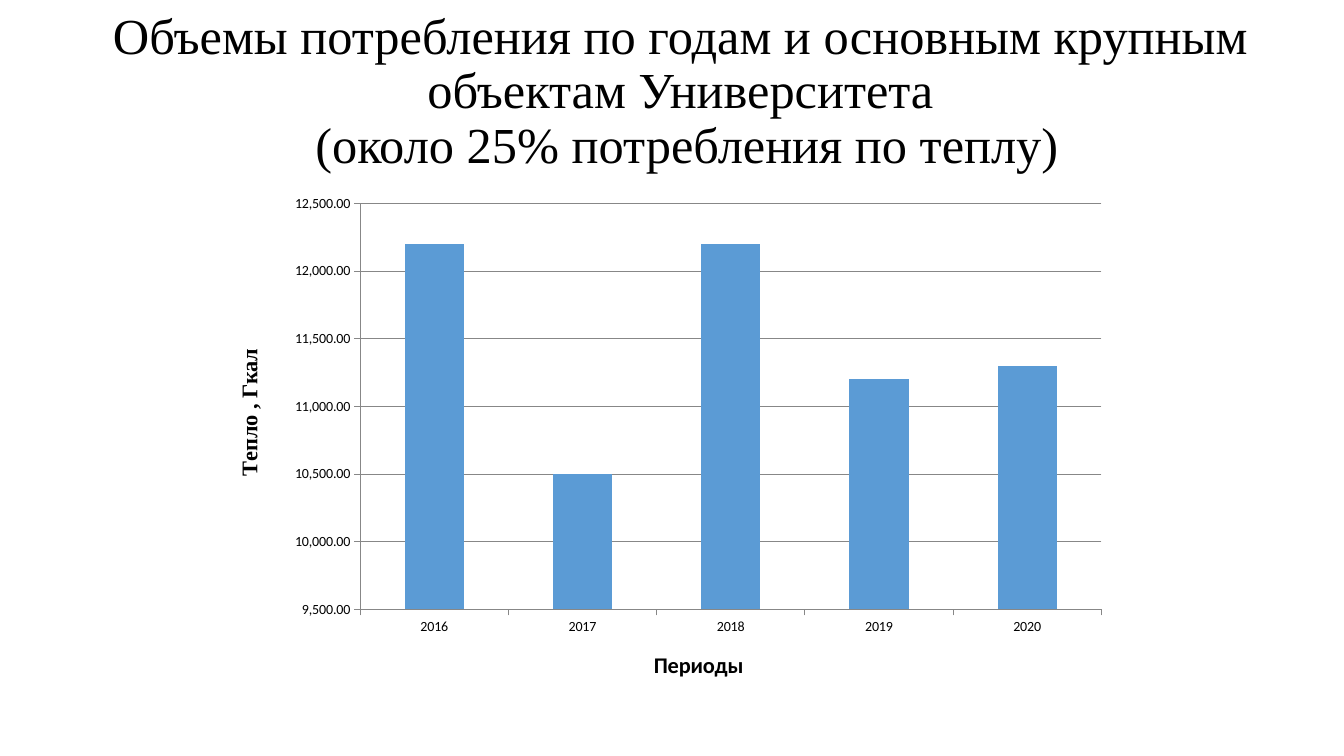
from lxml import etree
from pptx import Presentation
from pptx.chart.data import CategoryChartData
from pptx.dml.color import RGBColor
from pptx.enum.chart import XL_CHART_TYPE as ChartType, XL_TICK_MARK as TickMark
from pptx.enum.text import MSO_ANCHOR as Anchor, PP_ALIGN as Align
from pptx.oxml.ns import qn
from pptx.util import Inches, Pt

COLORS = {"text": "000000", "bar": "5B9BD5", "line": "878787"}
HEADING_FONT = "Times New Roman"
CHART_FONT = "Calibri"
HEADING = ("Объемы потребления по годам и основным крупным объектам Университета"
           "\v (около 25% потребления по теплу)")
HEAT_BY_YEAR = {"2016": 12200, "2017": 10500, "2018": 12200, "2019": 11200, "2020": 11300}


def color(name):
    return RGBColor.from_string(COLORS[name])


def style_font(font, name, size, bold=False):
    font.name = name
    font.size = Pt(size)
    font.bold = bold
    font.color.rgb = color("text")


def set_layout(element, **percents):
    """Place a chart part at percentages of the chart's width and height."""
    for old_layout in element.findall(qn("c:layout")):
        element.remove(old_layout)
    layout = etree.Element(qn("c:layout"))
    manual = etree.SubElement(layout, qn("c:manualLayout"))
    if "w" in percents:
        etree.SubElement(manual, qn("c:layoutTarget"), val="inner")
    for key in ("x", "y"):
        etree.SubElement(manual, qn(f"c:{key}Mode"), val="edge")
    for key, value in percents.items():
        etree.SubElement(manual, qn(f"c:{key}"), val=f"{value / 100:.3f}")
    text = element.find(qn("c:tx"))
    element.insert(0 if text is None else element.index(text) + 1, layout)


def add_heading(slide, left, top, width, height):
    box = slide.shapes.add_textbox(Inches(left), Inches(top), Inches(width), Inches(height))
    frame = box.text_frame
    frame.word_wrap = True
    frame.vertical_anchor = Anchor.MIDDLE
    paragraph = frame.paragraphs[0]
    paragraph.text = HEADING
    paragraph.alignment = Align.CENTER
    paragraph.line_spacing = 0.9
    for run in paragraph.runs:
        style_font(run.font, HEADING_FONT, 36)


def style_axis(axis, title, title_font, x, y):
    axis.major_tick_mark = TickMark.OUTSIDE
    axis.minor_tick_mark = TickMark.NONE
    axis.format.line.color.rgb = color("line")
    axis.format.line.width = Pt(0.75)
    paragraph = axis.axis_title.text_frame.paragraphs[0]
    paragraph.text = title
    style_font(paragraph.runs[0].font, title_font, 16, bold=True)
    set_layout(axis.axis_title._element, x=x, y=y)


def add_heat_chart(slide, left, top, width, height):
    data = CategoryChartData()
    data.categories = list(HEAT_BY_YEAR)
    data.add_series("Тепло", list(HEAT_BY_YEAR.values()))
    chart = slide.shapes.add_chart(ChartType.COLUMN_CLUSTERED, Inches(left), Inches(top),
                                   Inches(width), Inches(height), data).chart
    chart.has_title = False
    chart.has_legend = False
    style_font(chart.font, CHART_FONT, 10)

    # Bars
    plot = chart.plots[0]
    plot.vary_by_categories = False
    plot.gap_width = 150
    fill = plot.series[0].format.fill
    fill.solid()
    fill.fore_color.rgb = color("bar")
    set_layout(chart._chartSpace.chart.plotArea, x=15.5, y=3.5, w=82.4, h=78.5)

    # Axes
    style_axis(chart.category_axis, "Периоды", CHART_FONT, 47.7, 89)
    value_axis = chart.value_axis
    style_axis(value_axis, "Тепло , Гкал", HEADING_FONT, 1.1, 30.8)
    value_axis.minimum_scale = 9500
    value_axis.maximum_scale = 12500
    value_axis.major_unit = 500
    value_axis.tick_labels.number_format = "#,##0.00"
    value_axis.tick_labels.number_format_is_linked = False
    value_axis.has_major_gridlines = True
    grid_line = value_axis.major_gridlines.format.line
    grid_line.color.rgb = color("line")
    grid_line.width = Pt(0.75)


def main():
    presentation = Presentation()
    presentation.slide_width = Inches(13.33)
    presentation.slide_height = Inches(7.5)
    slide = presentation.slides.add_slide(presentation.slide_layouts[6])
    add_heading(slide, 0.26, 0.14, 12.98, 1.55)
    add_heat_chart(slide, 2.19, 1.84, 8.92, 5.13)
    presentation.save("out.pptx")


if __name__ == "__main__":
    main()
